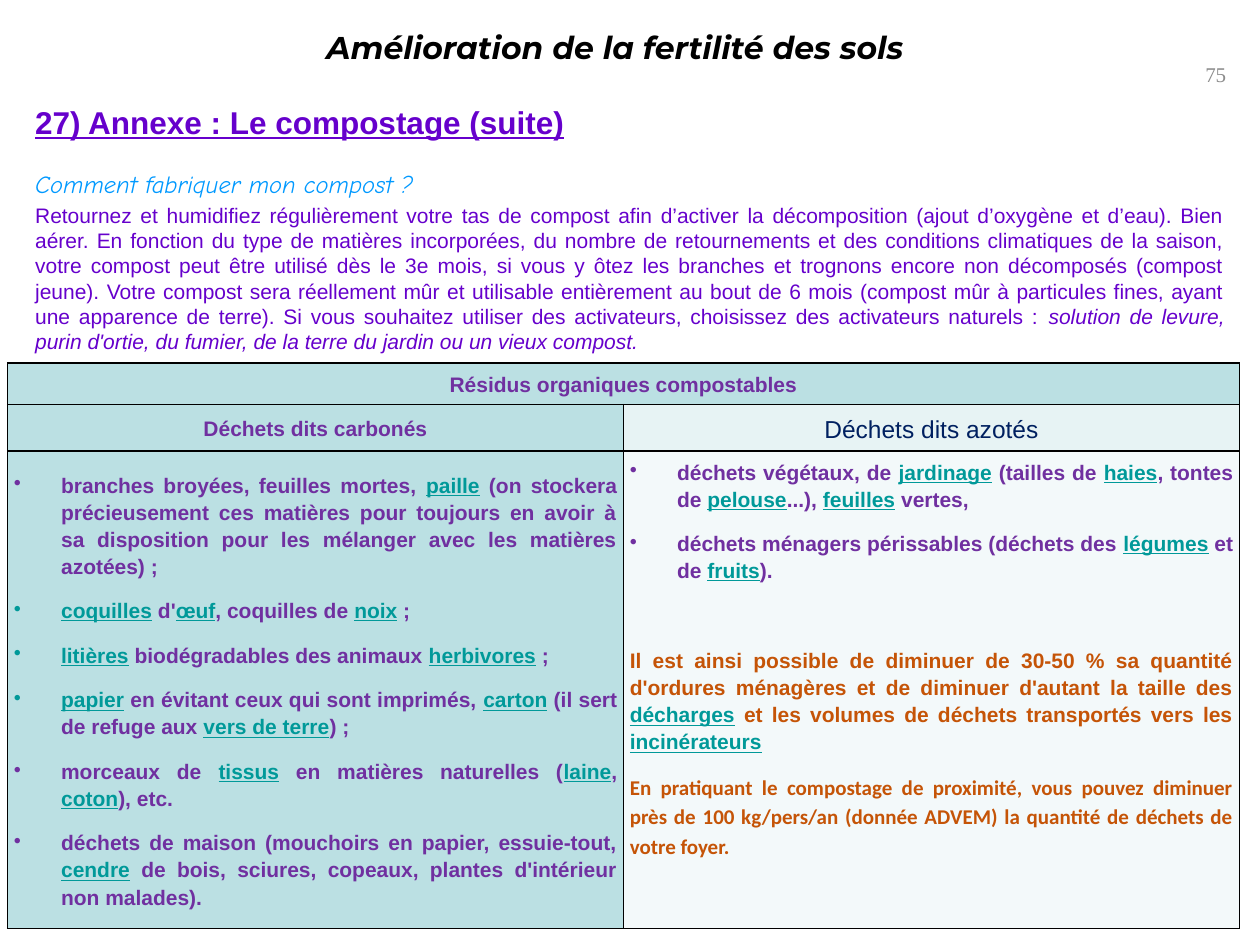
from dataclasses import dataclass

from lxml import etree
from pptx import Presentation
from pptx.dml.color import RGBColor
from pptx.enum.text import MSO_ANCHOR, MSO_AUTO_SIZE, PP_ALIGN
from pptx.oxml.ns import qn
from pptx.util import Pt

CENTER, RIGHT, JUSTIFY = PP_ALIGN.CENTER, PP_ALIGN.RIGHT, PP_ALIGN.JUSTIFY
TOP, MIDDLE = MSO_ANCHOR.TOP, MSO_ANCHOR.MIDDLE
FIT_SHAPE = MSO_AUTO_SIZE.SHAPE_TO_FIT_TEXT
BLANK_LAYOUT = 6


@dataclass(frozen=True)
class Theme:
    title: str = "FF9900"
    ink: str = "000000"
    number: str = "8C8C8C"
    body: str = "6600CC"
    question: str = "0099FF"
    table_text: str = "7030A0"
    nitrogen: str = "002060"
    link: str = "009999"
    advice: str = "C55407"
    fill_dark: str = "BBE0E3"
    fill_light: str = "E7F3F4"
    fill_pale: str = "F3F9FA"
    font: str = "Arial"
    large: int = 18
    medium: int = 14
    small: int = 12


THEME = Theme()

INTRO = (
    "Retournez et humidifiez régulièrement votre tas de compost afin d’activer la décomposition "
    "(ajout d’oxygène et d’eau). Bien aérer. En fonction du type de matières incorporées, du nombre "
    "de retournements et des conditions climatiques de la saison, votre compost peut être utilisé "
    "dès le 3e mois, si vous y ôtez les branches et trognons encore non décomposés (compost jeune). "
    "Votre compost sera réellement mûr et utilisable entièrement au bout de 6 mois (compost mûr à "
    "particules fines, ayant une apparence de terre). Si vous souhaitez utiliser des activateurs, "
    "choisissez des activateurs naturels : "
)
ACTIVATORS = (
    "solution de levure, purin d'ortie, du fumier, de la terre du jardin ou un vieux compost."
)

# Words between asterisks are shown as links.
CARBON_WASTE = [
    "branches broyées, feuilles mortes, *paille* (on stockera précieusement ces matières pour "
    "toujours en avoir à sa disposition pour les mélanger avec les matières azotées) ;",
    "*coquilles* d'*œuf*, coquilles de *noix* ;",
    "*litières* biodégradables des animaux *herbivores* ;",
    "*papier* en évitant ceux qui sont imprimés, *carton* (il sert de refuge aux *vers de terre*) ;",
    "morceaux de *tissus* en matières naturelles (*laine*, *coton*), etc.",
    "déchets de maison (mouchoirs en papier, essuie-tout, *cendre* de bois, sciures, copeaux, "
    "plantes d'intérieur non malades).",
]
NITROGEN_WASTE = [
    "déchets végétaux, de *jardinage* (tailles de *haies*, tontes de *pelouse*...), "
    "*feuilles* vertes,",
    "déchets ménagers périssables (déchets des *légumes* et de *fruits*).",
]
REDUCTION = (
    "Il est ainsi possible de diminuer de 30-50 % sa quantité d'ordures ménagères et de diminuer "
    "d'autant la taille des *décharges* et les volumes de déchets transportés vers les "
    "*incinérateurs*"
)
PROXIMITY = (
    "En pratiquant le compostage de proximité, vous pouvez diminuer près de 100 kg/pers/an "
    "(donnée ADVEM) la quantité de déchets de votre foyer."
)


def add_run(paragraph, text, size, color, font=THEME.font, bold=False, italic=False,
            underline=False):
    run = paragraph.add_run()
    run.text = text
    run.font.size = Pt(size)
    run.font.name = font
    run.font.bold = bold
    run.font.italic = italic
    run.font.underline = underline
    run.font.color.rgb = RGBColor.from_string(color)
    return run


def add_text_frame(slide, left, top, width, height, wrap=True):
    box = slide.shapes.add_textbox(Pt(left), Pt(top), Pt(width), Pt(height))
    box.text_frame.word_wrap = wrap
    return box.text_frame


def add_solid_fill(parent, color):
    fill = etree.SubElement(parent, qn("a:solidFill"))
    return etree.SubElement(fill, qn("a:srgbClr"), val=color)


def outline_run(run, color, width, opacity):
    """Draw a line around the letters and make their fill slightly transparent."""
    properties = run.font._element
    line = etree.Element(qn("a:ln"), w=str(Pt(width)))
    add_solid_fill(line, color)
    properties.insert(0, line)
    fill_color = properties.find(qn("a:solidFill")).find(qn("a:srgbClr"))
    etree.SubElement(fill_color, qn("a:alpha"), val=str(opacity * 1000))


def add_title(slide):
    paragraph = add_text_frame(slide, 82.1, 12.2, 538.6, 39.6, wrap=False).paragraphs[0]
    paragraph.alignment = CENTER
    run = add_run(paragraph, "Amélioration de la fertilité des sols", THEME.large, THEME.title,
                  "Montserrat", bold=True, italic=True)
    outline_run(run, THEME.ink, 1.25, 88)


def add_page_number(slide):
    frame = add_text_frame(slide, 671.8, 31.7, 36, 21.6)
    frame.vertical_anchor = MIDDLE
    paragraph = frame.paragraphs[0]
    paragraph.alignment = RIGHT
    add_run(paragraph, "75", THEME.small, THEME.number, "Times New Roman")


def add_introduction(slide):
    frame = add_text_frame(slide, 13, 55.4, 694, 156.2)
    frame.auto_size = FIT_SHAPE
    add_run(frame.paragraphs[0], "27) Annexe : Le compostage (suite)", THEME.large, THEME.body,
            bold=True, underline=True)
    question = frame.add_paragraph()
    question.space_before = Pt(16)
    add_run(question, "Comment fabriquer mon compost ?", THEME.medium, THEME.question,
            "Comic Neue", italic=True)
    answer = frame.add_paragraph()
    answer.alignment = JUSTIFY
    answer.space_before = Pt(2.4)
    add_run(answer, INTRO, THEME.small, THEME.body)
    add_run(answer, ACTIVATORS, THEME.small, THEME.body, italic=True)


def style_cell(cell, fill, anchor=MIDDLE):
    properties = cell._tc.get_or_add_tcPr()
    for side in ("a:lnL", "a:lnR", "a:lnT", "a:lnB"):
        add_solid_fill(etree.SubElement(properties, qn(side), w=str(Pt(1))), THEME.ink)
    cell.fill.solid()
    cell.fill.fore_color.rgb = RGBColor.from_string(fill)
    cell.vertical_anchor = anchor
    cell.margin_left = cell.margin_right = cell.margin_top = cell.margin_bottom = Pt(3.6)


def fill_header(cell, text, size=THEME.small, color=THEME.table_text, bold=True):
    paragraph = cell.text_frame.paragraphs[0]
    paragraph.alignment = CENTER
    paragraph.line_spacing = 1.15
    paragraph.space_before = paragraph.space_after = Pt(12)
    add_run(paragraph, text, size, color, bold=bold)


def fill_paragraph(paragraph, text, color=THEME.table_text, font=THEME.font):
    paragraph.alignment = JUSTIFY
    paragraph.line_spacing = 1.15
    paragraph.space_after = Pt(10)
    for index, part in enumerate(text.split("*")):
        is_link = index % 2 == 1
        if part:
            add_run(paragraph, part, THEME.small, THEME.link if is_link else color, font,
                    bold=True, underline=is_link)


def fill_bullets(cell, items):
    frame = cell.text_frame
    for index, item in enumerate(items):
        paragraph = frame.add_paragraph() if index else frame.paragraphs[0]
        fill_paragraph(paragraph, item)
        properties = paragraph._p.get_or_add_pPr()
        properties.set("marL", str(Pt(27)))
        properties.set("indent", str(-Pt(27)))
        etree.SubElement(properties, qn("a:buChar"), char="•")


def add_waste_table(slide):
    row_heights = (23.8, 26.6, 272.9)
    table = slide.shapes.add_table(3, 2, Pt(4.3), Pt(207.4), Pt(704), Pt(sum(row_heights))).table
    table.first_row = table.horz_banding = False
    for row, height in zip(table.rows, row_heights):
        row.height = Pt(height)
    fills = ((THEME.fill_dark, THEME.fill_dark), (THEME.fill_dark, THEME.fill_light),
             (THEME.fill_dark, THEME.fill_pale))
    for row, row_fills in enumerate(fills):
        for column, fill in enumerate(row_fills):
            style_cell(table.cell(row, column), fill)

    table.cell(0, 0).merge(table.cell(0, 1))
    fill_header(table.cell(0, 0), "Résidus organiques compostables")
    fill_header(table.cell(1, 0), "Déchets dits carbonés")
    fill_header(table.cell(1, 1), "Déchets dits azotés", THEME.medium, THEME.nitrogen, bold=False)

    fill_bullets(table.cell(2, 0), CARBON_WASTE)
    nitrogen_cell = table.cell(2, 1)
    nitrogen_cell.vertical_anchor = TOP
    fill_bullets(nitrogen_cell, NITROGEN_WASTE)
    reduction = nitrogen_cell.text_frame.add_paragraph()
    fill_paragraph(reduction, REDUCTION, THEME.advice)
    reduction.space_before = Pt(26)
    fill_paragraph(nitrogen_cell.text_frame.add_paragraph(), PROXIMITY, THEME.advice, "Calibri")


def main():
    presentation = Presentation()
    presentation.slide_width, presentation.slide_height = Pt(720), Pt(540)
    slide = presentation.slides.add_slide(presentation.slide_layouts[BLANK_LAYOUT])
    add_title(slide)
    add_page_number(slide)
    add_introduction(slide)
    add_waste_table(slide)
    presentation.save("out.pptx")


if __name__ == "__main__":
    main()
